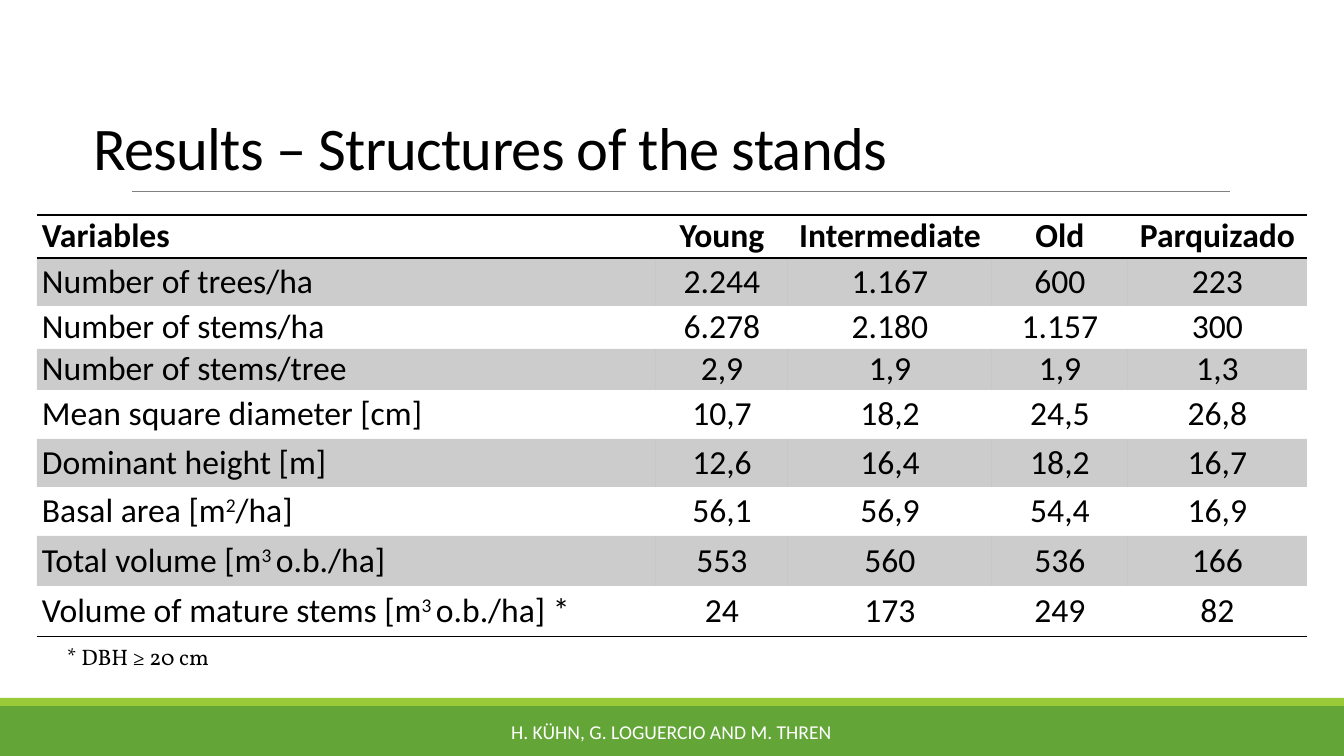
from pptx import Presentation
from pptx import util as u
from pptx.dml.color import RGBColor
from pptx.enum import shapes, text
from pptx.oxml import parse_xml
from pptx.oxml.ns import nsdecls

PX = 9071  # EMU in one px; the slide is 1344 px wide
BLACK = RGBColor(0x00, 0x00, 0x00)
WHITE = RGBColor(0xFF, 0xFF, 0xFF)
GREY = RGBColor(0x80, 0x80, 0x80)
GREEN = RGBColor(0x63, 0xA5, 0x37)
LIME = RGBColor(0x99, 0xCB, 0x38)
NO_STYLE = "{2D5ABB26-0587-4C30-8999-92F81FD0307C}"

# Text between bars is superscript.
ROWS = [
    ("Variables", "Young", "Intermediate", "Old", "Parquizado"),
    ("Number of trees/ha", "2.244", "1.167", "600", "223"),
    ("Number of stems/ha", "6.278", "2.180", "1.157", "300"),
    ("Number of stems/tree", "2,9", "1,9", "1,9", "1,3"),
    ("Mean square diameter [cm]", "10,7", "18,2", "24,5", "26,8"),
    ("Dominant height [m]", "12,6", "16,4", "18,2", "16,7"),
    ("Basal area [m|2|/ha]", "56,1", "56,9", "54,4", "16,9"),
    ("Total volume [m|3 |o.b./ha]", "553", "560", "536", "166"),
    ("Volume of mature stems [m|3 |o.b./ha] *", "24", "173", "249", "82"),
]
COLUMN_WIDTHS = [619, 132, 204, 136, 179]
ROW_HEIGHTS = [43, 48, 43, 41, 49, 48, 49, 50, 51]


def box(*lengths):
    return [length * PX for length in lengths]


def style(font, size, color=BLACK, name="Calibri", bold=False):
    font.size, font.name, font.bold = u.Pt(size), name, bold
    font.color.rgb = color


prs = Presentation()
prs.slide_width, prs.slide_height = box(1344, 756)
slide = prs.slides.add_slide(prs.slide_layouts[5])

# Footer bands and the rule under the title
for top, height, color in [(706, 50, GREEN), (698, 8, LIME)]:
    band = slide.shapes.add_shape(
        shapes.MSO_SHAPE.RECTANGLE, *box(0, top, 1344, height))
    band.shadow.inherit = False
    band.fill.solid()
    band.fill.fore_color.rgb = color
    band.line.fill.background()

rule = slide.shapes.add_connector(
    shapes.MSO_CONNECTOR.STRAIGHT, *box(132, 191, 1230, 191))
rule.line.color.rgb = GREY
rule.line.width = u.Pt(0.5)
rule._element.spPr.append(parse_xml(f"<a:effectLst {nsdecls('a')}/>"))

# Title
title = slide.shapes.title
title.left, title.top, title.width, title.height = box(83, 113, 1109, 75)
title.text_frame.text = "Results – Structures of the stands"
title.text_frame.vertical_anchor = text.MSO_ANCHOR.BOTTOM
title.text_frame.auto_size = text.MSO_AUTO_SIZE.NONE
heading = title.text_frame.paragraphs[0]
heading.alignment = text.PP_ALIGN.LEFT
heading.line_spacing = 0.85
style(heading.runs[0].font, 43.2)
heading.runs[0].font._element.set("spc", "-50")

# Table of stand structures
frame = slide.shapes.add_table(
    len(ROWS), len(COLUMN_WIDTHS),
    *box(37, 215, sum(COLUMN_WIDTHS), sum(ROW_HEIGHTS)))
stands = frame.table
stands.horz_banding = False
stands._tbl.tblPr.find("{*}tableStyleId").text = NO_STYLE
for column, width in zip(stands.columns, COLUMN_WIDTHS):
    column.width = width * PX
for row, height in zip(stands.rows, ROW_HEIGHTS):
    row.height = height * PX

last = len(ROWS) - 1
for r, values in enumerate(ROWS):
    edges = {0: ["lnT", "lnB"], last: ["lnB"]}.get(r, [])
    for c, value in enumerate(values):
        cell = stands.cell(r, c)
        cell.margin_left = cell.margin_right = 5 * PX
        cell.margin_top = cell.margin_bottom = 0
        cell.vertical_anchor = text.MSO_ANCHOR.MIDDLE
        entry = cell.text_frame.paragraphs[0]
        entry.alignment = text.PP_ALIGN.CENTER if c else text.PP_ALIGN.LEFT
        entry.space_before = entry.space_after = u.Pt(6)
        for i, part in enumerate(value.split("|")):
            run = entry.add_run()
            run.text = part
            style(run.font, 24, bold=r == 0)
            if i % 2:
                run.font._element.set("baseline", "30000")

        properties = cell._tc.get_or_add_tcPr()
        for edge in edges:
            properties.append(parse_xml(
                f'<a:{edge} {nsdecls("a")} w="12700"><a:solidFill>'
                f'<a:srgbClr val="{BLACK}"/></a:solidFill></a:{edge}>'))
        if r % 2:
            cell.fill.solid()
            cell.fill.fore_color.rgb = BLACK
            properties.find(".//{*}solidFill/{*}srgbClr").append(
                parse_xml(f'<a:alpha {nsdecls("a")} val="20000"/>'))
        else:
            cell.fill.background()

# Authors in the footer and the note under the table
for wording, place, size, color, font, align in [
    ("H. KÜHN, G. LOGUERCIO AND M. THREN", (406, 712, 531, 40),
     14, WHITE, "Calibri", text.PP_ALIGN.CENTER),
    ("* DBH ≥ 20 cm", (57, 638, 467, 37),
     16, BLACK, "Vollkorn", text.PP_ALIGN.LEFT),
]:
    note = slide.shapes.add_textbox(*box(*place)).text_frame
    note.word_wrap = True
    note.vertical_anchor = text.MSO_ANCHOR.MIDDLE
    note.text = wording
    note.paragraphs[0].alignment = align
    style(note.paragraphs[0].runs[0].font, size, color, font)

prs.save("out.pptx")
